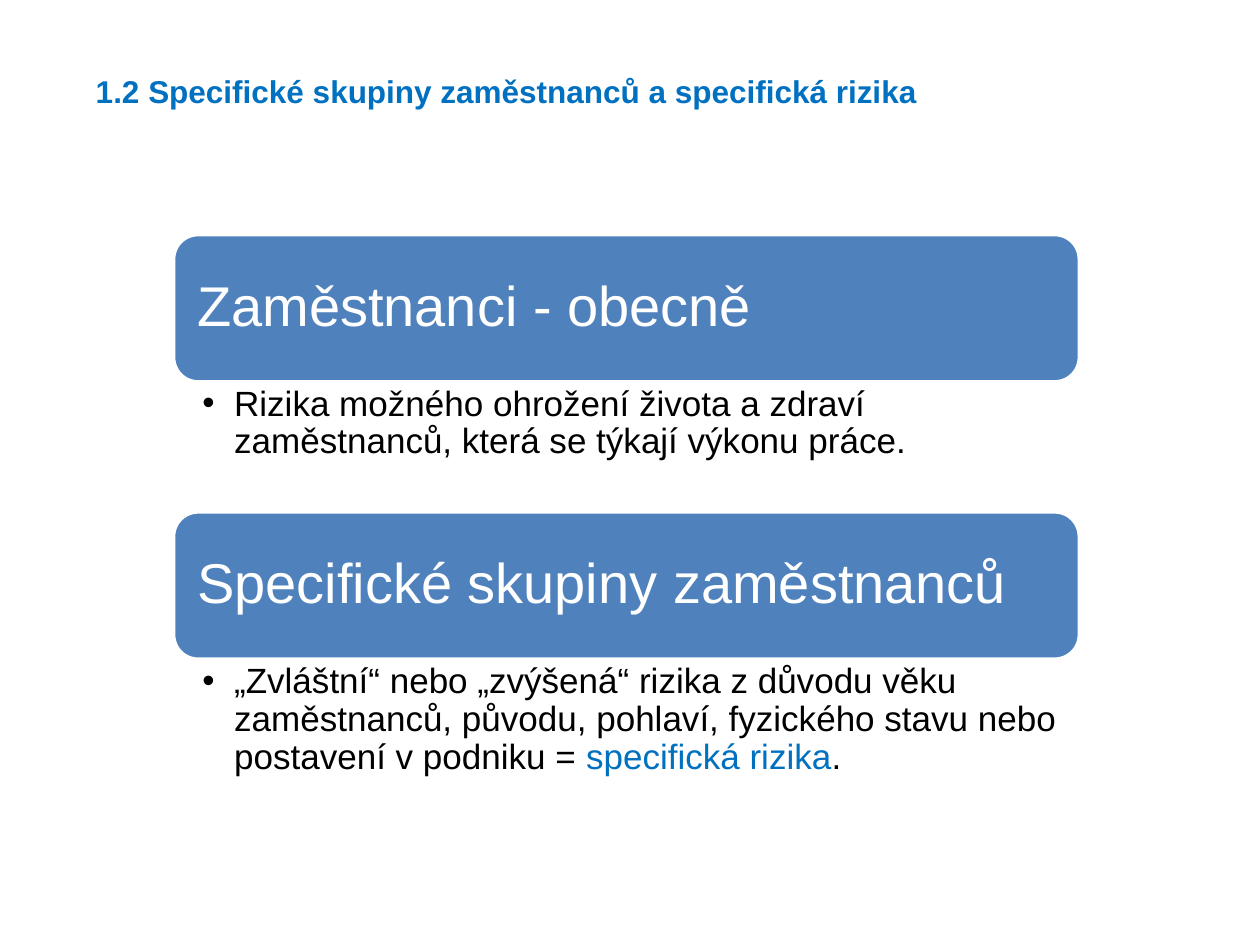
from dataclasses import dataclass

from lxml import etree
from pptx import Presentation
from pptx import util as u
from pptx.dml.color import RGBColor
from pptx.enum import shapes, text
from pptx.oxml.ns import qn


@dataclass
class Theme:
    font: str = "Arial"
    blue: str = "0070C0"
    fill: str = "4F81BD"
    white: str = "FFFFFF"
    black: str = "000000"
    title: int = 18
    head: int = 32
    body: int = 20


class Deck:
    """Holds the theme and the current slide."""

    def __init__(self, theme, slide):
        self.theme = theme
        self.slide = slide

    def place(self, shape, left, top, width, height):
        shape.left, shape.top = u.Cm(left), u.Cm(top)
        shape.width, shape.height = u.Cm(width), u.Cm(height)

    def frame(self, shape, pads, anchor, wrap=True):
        box = shape.text_frame
        box.auto_size = text.MSO_AUTO_SIZE.NONE
        box.word_wrap = wrap
        box.vertical_anchor = anchor
        (box.margin_left, box.margin_top,
         box.margin_right, box.margin_bottom) = [u.Cm(p) for p in pads]
        para = box.paragraphs[0]
        para.alignment = text.PP_ALIGN.LEFT
        para.space_before = u.Pt(0)
        return para

    def run(self, para, words, size, color, bold=False):
        run = para.add_run()
        run.text = words
        font = run.font
        font.name, font.size, font.bold = self.theme.font, u.Pt(size), bold
        font.color.rgb = RGBColor.from_string(color)

    def title(self, words, *area):
        shape = self.slide.shapes.title
        self.place(shape, *area)
        para = self.frame(shape, (0.25, 0.13, 0.25, 0.13),
                          text.MSO_ANCHOR.TOP, wrap=False)
        self.run(para, words, self.theme.title, self.theme.blue, True)

    def card(self, words, *area):
        shape = self.slide.shapes.add_shape(
            shapes.MSO_SHAPE.ROUNDED_RECTANGLE, *[u.Cm(a) for a in area])
        shape.shadow.inherit = False
        shape.fill.solid()
        shape.fill.fore_color.rgb = RGBColor.from_string(self.theme.fill)
        shape.line.color.rgb = RGBColor.from_string(self.theme.white)
        shape.line.width = u.Pt(2)
        para = self.frame(shape, (0.33,) * 4, text.MSO_ANCHOR.MIDDLE)
        para.line_spacing = 0.9
        self.run(para, words, self.theme.head, self.theme.white)

    def point(self, shape, runs, *area):
        self.place(shape, *area)
        para = self.frame(shape, (0.58, 0.08, 0.41, 0.08),
                          text.MSO_ANCHOR.TOP)
        para.line_spacing = 0.9
        # Bullet with a hanging indent
        props = para._p.get_or_add_pPr()
        props.set("marL", str(u.Cm(0.64)))
        props.set("indent", str(-u.Cm(0.64)))
        etree.SubElement(props, qn("a:buFont")).set("typeface", self.theme.font)
        etree.SubElement(props, qn("a:buChar")).set("char", "•")
        for words, color in runs:
            self.run(para, words, self.theme.body, color)


def main():
    prs = Presentation()
    prs.slide_width, prs.slide_height = u.Cm(25.4), u.Cm(19.05)
    theme = Theme()
    deck = Deck(theme, prs.slides.add_slide(prs.slide_layouts[3]))

    # Heading
    deck.title("1.2 Specifické skupiny zaměstnanců a specifická rizika",
               1.68, 1.32, 17.22, 1.02)

    # Groups of employees, each a card with its point below
    groups = [
        ("Zaměstnanci - obecně",
         [("Rizika možného ohrožení života a zdraví zaměstnanců, "
           "která se týkají výkonu práce.", theme.black)]),
        ("Specifické skupiny zaměstnanců",
         [("„Zvláštní“ nebo „zvýšená“ rizika z důvodu věku zaměstnanců, "
           "původu, pohlaví, fyzického stavu nebo postavení v podniku = ",
           theme.black),
          ("specifická rizika", theme.blue),
          (".", theme.black)]),
    ]
    left, top, width, tall, low = 3.5, 4.73, 18.26, 2.97, 2.62
    bodies = list(deck.slide.placeholders)[1:]
    for body, (head, runs) in zip(bodies, groups):
        deck.card(head, left, top, width, tall)
        deck.point(body, runs, left, top + tall, width, low)
        top += tall + low

    prs.save("out.pptx")


if __name__ == "__main__":
    main()
